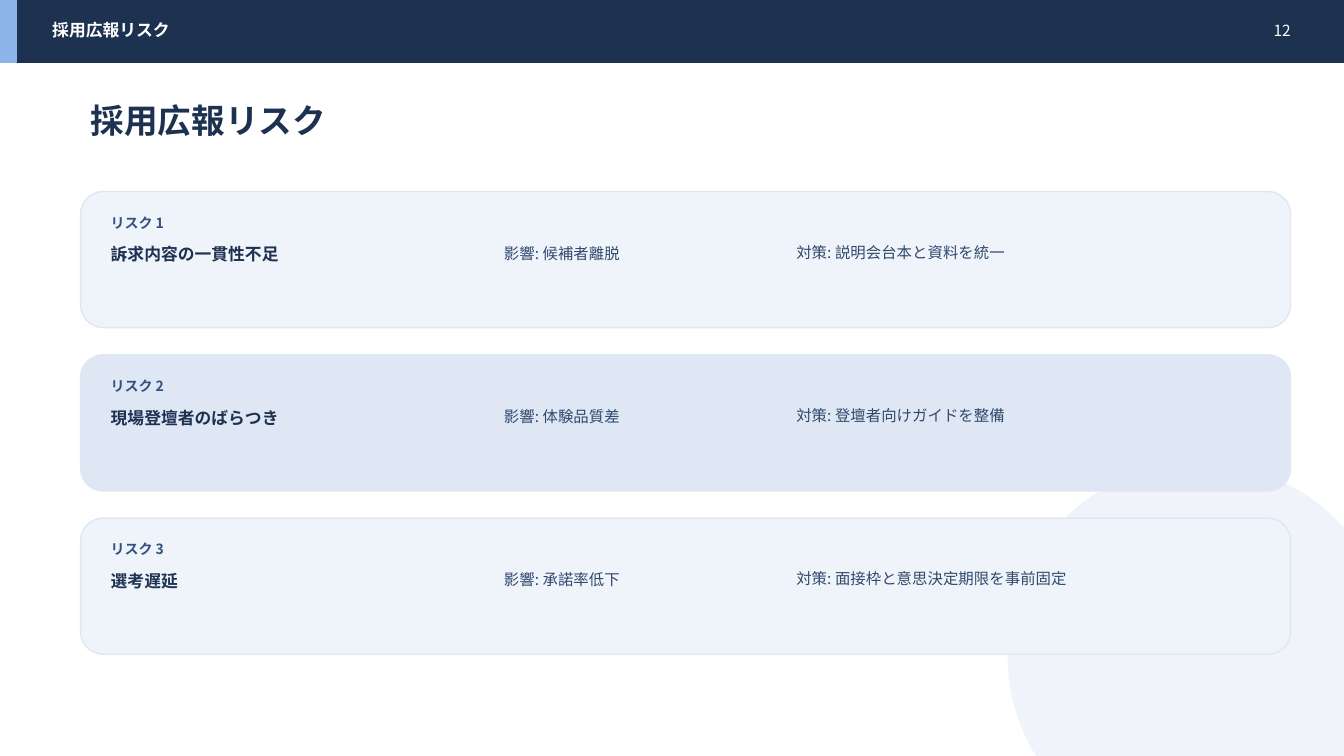
from lxml import etree
from pptx import Presentation
from pptx.dml.color import RGBColor
from pptx.enum.shapes import MSO_SHAPE
from pptx.enum.text import MSO_ANCHOR, MSO_AUTO_SIZE, PP_ALIGN
from pptx.oxml.ns import qn
from pptx.util import Inches, Pt

RECTANGLE, ROUNDED, OVAL = MSO_SHAPE.RECTANGLE, MSO_SHAPE.ROUNDED_RECTANGLE, MSO_SHAPE.OVAL
TOP, MIDDLE = MSO_ANCHOR.TOP, MSO_ANCHOR.MIDDLE
LEFT, RIGHT = PP_ALIGN.LEFT, PP_ALIGN.RIGHT
NO_AUTOFIT = MSO_AUTO_SIZE.NONE

BODY_FONT = "Noto Sans CJK JP"
TITLE_FONT = "Times New Roman"
COLORS = {
    "navy": "1D3150",
    "accent": "8CB4E8",
    "white": "FFFFFF",
    "pale": "EFF3FA",
    "tint": "DFE7F4",
    "label": "33527F",
    "body": "31496D",
}
HEADING = "採用広報リスク"
RISKS = [
    ("訴求内容の一貫性不足", "候補者離脱", "説明会台本と資料を統一"),
    ("現場登壇者のばらつき", "体験品質差", "登壇者向けガイドを整備"),
    ("選考遅延", "承諾率低下", "面接枠と意思決定期限を事前固定"),
]
CARD_HEIGHT = 1.35
CARD_PITCH = 1.62


def rgb(name):
    return RGBColor.from_string(COLORS[name])


def add_panel(slide, kind, box, fill, line=None):
    panel = slide.shapes.add_shape(kind, *map(Inches, box))
    panel.shadow.inherit = False
    panel.fill.solid()
    panel.fill.fore_color.rgb = rgb(fill)
    panel.line.color.rgb = rgb(line or fill)
    panel.line.width = Pt(1)
    return panel


def write(frame, text, size, color, bold=False, align=LEFT, anchor=MIDDLE, font=BODY_FONT):
    """Fill a text frame with one formatted paragraph."""
    frame.word_wrap = True
    frame.auto_size = NO_AUTOFIT
    frame.vertical_anchor = anchor
    para = frame.paragraphs[0]
    para.text = text
    para.alignment = align
    para.font.size = Pt(size)
    para.font.bold = bold
    para.font.color.rgb = rgb(color)
    para.font.name = font
    defaults = para._p.pPr.find(qn("a:defRPr"))
    etree.SubElement(defaults, qn("a:ea"), typeface=BODY_FONT)


def add_text(slide, box, text, size, color, **style):
    text_box = slide.shapes.add_textbox(*map(Inches, box))
    write(text_box.text_frame, text, size, color, **style)


def add_backdrop(slide, box):
    circle = add_panel(slide, OVAL, box, "pale")
    color = circle.fill._xPr.find(qn("a:solidFill"))[0]
    etree.SubElement(color, qn("a:alpha"), val="88000")


def add_header(slide, box, page_number):
    left, top, width, height = box
    add_panel(slide, RECTANGLE, box, "navy")
    add_panel(slide, RECTANGLE, (left, top, 0.16, height), "accent")
    add_text(slide, (left + 0.42, top + 0.17, 8.8, 0.26), HEADING, 12, "white", bold=True)
    add_text(slide, (left + width - 1.18, top + 0.17, 0.75, 0.26), page_number, 11, "white",
             align=RIGHT)


def place_title(slide, box):
    title = slide.shapes.title
    title.left, title.top, title.width, title.height = map(Inches, box)
    write(title.text_frame, HEADING, 24, "navy", bold=True, font=TITLE_FONT)


def add_risk_card(slide, box, number, risk, fill):
    left, top = box[:2]
    name, impact, measure = risk
    row = top + 0.46
    add_panel(slide, ROUNDED, box, fill, "tint")
    add_text(slide, (left + 0.2, top + 0.2, 1.2, 0.22), f"リスク {number}", 10, "label", bold=True)
    add_text(slide, (left + 0.2, row, 3.7, 0.32), name, 12, "navy", bold=True)
    add_text(slide, (left + 4.1, row, 2.8, 0.3), f"影響: {impact}", 11, "body")
    add_text(slide, (left + 7, row, 4.8, 0.58), f"対策: {measure}", 11, "body", anchor=TOP)


def build_risk_slide(deck):
    slide = deck.slides.add_slide(deck.slide_layouts[5])
    slide.background.fill.solid()
    slide.background.fill.fore_color.rgb = rgb("white")
    add_backdrop(slide, (10, 4.6, 3.8, 3.8))
    add_header(slide, (0, 0, 13.33, 0.62), "12")
    place_title(slide, (0.8, 0.95, 11.4, 0.48))
    for index, risk in enumerate(RISKS):
        box = (0.8, 1.9 + index * CARD_PITCH, 12, CARD_HEIGHT)
        add_risk_card(slide, box, index + 1, risk, "tint" if index % 2 else "pale")


def main():
    deck = Presentation()
    deck.slide_width, deck.slide_height = Inches(13.33), Inches(7.5)
    build_risk_slide(deck)
    deck.save("out.pptx")


if __name__ == "__main__":
    main()
